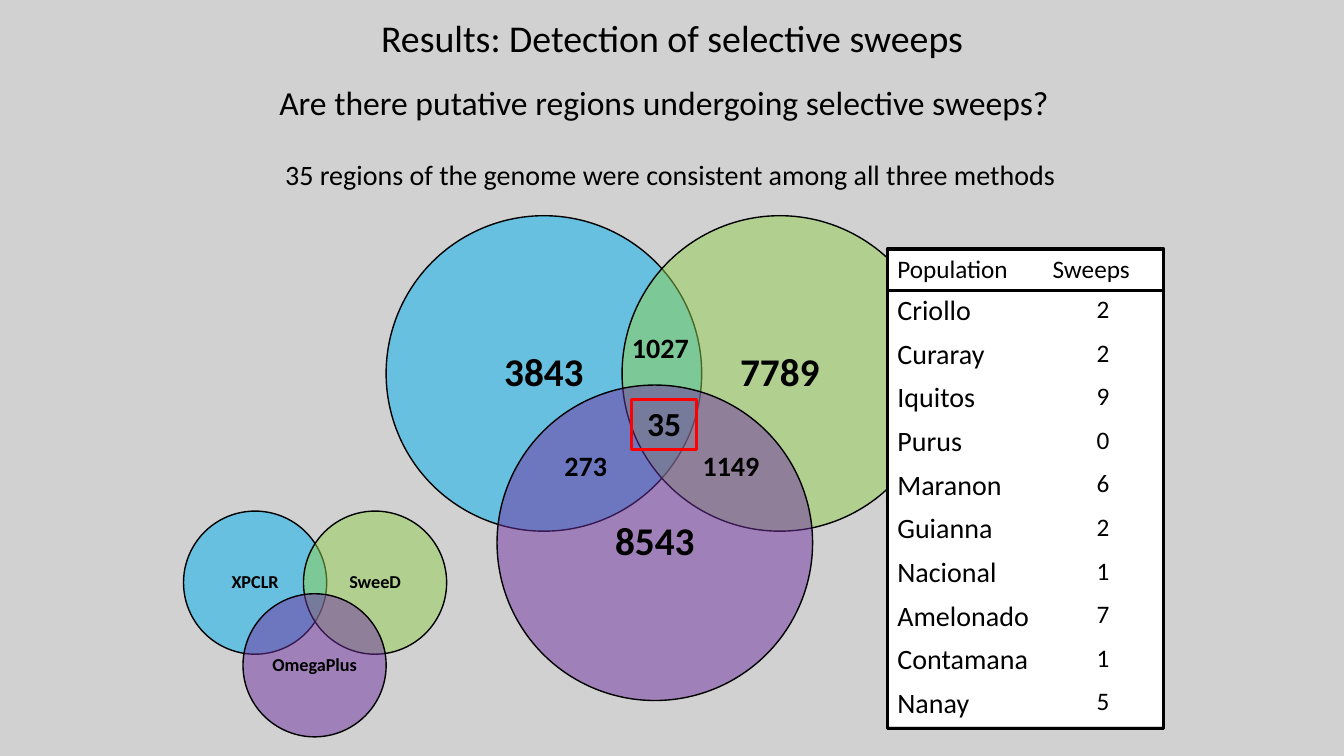
"""Build the selective sweeps slide with its Venn diagram, key and population table."""
from dataclasses import dataclass

import pptx
from lxml import etree
from pptx import slide as slides
from pptx import util as u
from pptx.dml import color
from pptx.enum import shapes, text
from pptx.oxml import ns
from pptx.shapes import autoshape, shapetree
from pptx.text import text as texts


@dataclass(frozen=True)
class Theme:
    font: str = "Calibri"
    background: str = "D1D1D1"
    ink: str = "000000"
    paper: str = "FFFFFF"
    accent: str = "FF0000"
    blue: str = "00B0F0"
    green: str = "92D050"
    purple: str = "7030A0"
    opacity: int = 50
    title: int = 27
    question: int = 24
    body: int = 20
    table: int = 18
    total: int = 28
    shared: int = 24
    key: int = 13
    thin: float = 1
    thick: float = 2.25


@dataclass(frozen=True)
class Box:
    left: float
    top: float
    width: float
    height: float

    def lengths(self) -> tuple[u.Length, ...]:
        return tuple(u.Inches(n) for n in (self.left, self.top, self.width, self.height))


@dataclass(frozen=True)
class Circle:
    label: str
    left: float
    top: float
    fill: str


@dataclass(frozen=True)
class Label:
    words: str
    box: Box
    size: int


THEME = Theme()
TABLE_BOX = Box(8.8, 2.47, 2.74, 4.73)
FRAME_BOX = Box(8.8, 2.47, 2.74, 4.76)
HEADER_HEIGHT = 0.4
HEADER_LINE = 2.88
COLUMN_WIDTHS = (1.54, 1.2)
TITLE = Label("Results: Detection of selective sweeps", Box(3.68, 0.1, 6.15, 0.56), THEME.title)
QUESTION = Label("Are there putative regions undergoing selective sweeps?",
                 Box(2.67, 0.76, 7.99, 0.5), THEME.question)
FINDING = Label("35 regions of the genome were consistent among all three methods",
                Box(2.73, 1.51, 8.17, 0.44), THEME.body)
TOTALS = (
    Circle("3843", 3.83, 2.14, THEME.blue),
    Circle("7789", 6.17, 2.14, THEME.green),
    Circle("8543", 4.93, 3.82, THEME.purple),
)
METHODS = (
    Circle("XPCLR", 1.82, 5.07, THEME.blue),
    Circle("SweeD", 3.01, 5.07, THEME.green),
    Circle("OmegaPlus", 2.41, 5.89, THEME.purple),
)
OVERLAPS = (
    Label("1027", Box(6.17, 3.23, 0.8, 0.44), THEME.body),
    Label("273", Box(5.5, 4.4, 0.67, 0.44), THEME.body),
    Label("1149", Box(6.87, 4.4, 0.88, 0.44), THEME.body),
    Label("35", Box(6.32, 3.95, 0.65, 0.5), THEME.shared),
)
SHARED_BOX = Box(6.26, 3.96, 0.65, 0.5)
SWEEPS = (
    ("Population", "Sweeps"), ("Criollo", "2"), ("Curaray", "2"), ("Iquitos", "9"),
    ("Purus", "0"), ("Maranon", "6"), ("Guianna", "2"), ("Nacional", "1"),
    ("Amelonado", "7"), ("Contamana", "1"), ("Nanay", "5"),
)


def rgb(code: str) -> color.RGBColor:
    return color.RGBColor.from_string(code)


def write(frame: texts.TextFrame, words: str, size: int, bold: bool = False,
          align: text.PP_ALIGN = text.PP_ALIGN.LEFT) -> None:
    frame.text = words
    para = frame.paragraphs[0]
    para.alignment = align
    for span in para.runs:
        span.font.name = THEME.font
        span.font.size = u.Pt(size)
        span.font.bold = bold
        span.font.color.rgb = rgb(THEME.ink)


def fill_placeholder(holder: autoshape.Shape, label: Label) -> None:
    holder.left, holder.top, holder.width, holder.height = label.box.lengths()
    frame = holder.text_frame
    write(frame, label.words, label.size)
    frame.word_wrap = True
    frame.auto_size = text.MSO_AUTO_SIZE.NONE
    frame.vertical_anchor = text.MSO_ANCHOR.TOP
    para = frame.paragraphs[0]
    para.space_before = u.Pt(0)
    properties = para._p.get_or_add_pPr()
    properties.set("marL", "0")
    properties.set("indent", "0")
    etree.SubElement(properties, ns.qn("a:buNone"))


def add_label(tree: shapetree._BaseGroupShapes, label: Label, bold: bool) -> None:
    frame = tree.add_textbox(*label.box.lengths()).text_frame
    frame.word_wrap = True
    write(frame, label.words, label.size, bold)


def add_outline(tree: shapetree._BaseGroupShapes, kind: shapes.MSO_SHAPE, box: Box,
                line: str, width: float) -> autoshape.Shape:
    shape = tree.add_shape(kind, *box.lengths())
    shape.shadow.inherit = False
    shape.fill.background()
    shape.line.color.rgb = rgb(line)
    shape.line.width = u.Pt(width)
    return shape


def add_circles(tree: shapetree._BaseGroupShapes, circles: tuple[Circle, ...],
                diameter: float, size: int, inset: float) -> None:
    for circle in circles:
        box = Box(circle.left, circle.top, diameter, diameter)
        shape = add_outline(tree, shapes.MSO_SHAPE.OVAL, box, THEME.ink, THEME.thin)
        shape.fill.solid()
        shape.fill.fore_color.rgb = rgb(circle.fill)
        tint = shape._element.spPr.find(ns.qn("a:solidFill"))[0]
        etree.SubElement(tint, ns.qn("a:alpha")).set("val", str(THEME.opacity * 1000))
        frame = shape.text_frame
        frame.margin_left = frame.margin_right = u.Inches(inset)
        frame.margin_top = frame.margin_bottom = u.Inches(inset)
        frame.vertical_anchor = text.MSO_ANCHOR.MIDDLE
        write(frame, circle.label, size, True, text.PP_ALIGN.CENTER)
        frame.paragraphs[0].line_spacing = 0.9


def add_sweep_table(page: slides.Slide) -> None:
    table = page.shapes.add_table(len(SWEEPS), len(COLUMN_WIDTHS), *TABLE_BOX.lengths()).table
    for column, width in zip(table.columns, COLUMN_WIDTHS):
        column.width = u.Inches(width)
    row_height = (TABLE_BOX.height - HEADER_HEIGHT) / (len(SWEEPS) - 1)
    for i, record in enumerate(SWEEPS):
        table.rows[i].height = u.Inches(row_height if i else HEADER_HEIGHT)
        for j, words in enumerate(record):
            cell = table.cell(i, j)
            cell.fill.solid()
            cell.fill.fore_color.rgb = rgb(THEME.paper)
            is_name = i > 0 and j == 0
            is_count = i > 0 and j == 1
            if is_name:
                cell.vertical_anchor = text.MSO_ANCHOR.MIDDLE
                cell.margin_top = cell.margin_bottom = u.Inches(0.04)
            write(cell.text_frame, words, THEME.body if is_name else THEME.table,
                  align=text.PP_ALIGN.CENTER if is_count else text.PP_ALIGN.LEFT)


def add_table_frame(page: slides.Slide) -> None:
    add_outline(page.shapes, shapes.MSO_SHAPE.RECTANGLE, FRAME_BOX, THEME.ink, THEME.thick)
    right = FRAME_BOX.left + FRAME_BOX.width
    divider = page.shapes.add_connector(
        shapes.MSO_CONNECTOR.STRAIGHT, u.Inches(right), u.Inches(HEADER_LINE),
        u.Inches(FRAME_BOX.left), u.Inches(HEADER_LINE))
    divider.line.color.rgb = rgb(THEME.ink)
    divider.line.width = u.Pt(THEME.thick)
    etree.SubElement(divider._element.spPr, ns.qn("a:effectLst"))


def main() -> None:
    deck = pptx.Presentation()
    deck.slide_width, deck.slide_height = u.Inches(13.33), u.Inches(7.5)
    page = deck.slides.add_slide(deck.slide_layouts[1])
    page.background.fill.solid()
    page.background.fill.fore_color.rgb = rgb(THEME.background)
    fill_placeholder(page.shapes.title, TITLE)
    fill_placeholder(page.placeholders[1], QUESTION)
    add_label(page.shapes, FINDING, False)
    venn = page.shapes.add_group_shape().shapes
    add_circles(venn, TOTALS, 3.13, THEME.total, 0.12)
    for overlap in OVERLAPS:
        add_label(venn, overlap, True)
    add_outline(venn, shapes.MSO_SHAPE.RECTANGLE, SHARED_BOX, THEME.accent, THEME.thick)
    add_sweep_table(page)
    add_circles(page.shapes.add_group_shape().shapes, METHODS, 1.42, THEME.key, 0.05)
    add_table_frame(page)
    deck.save("out.pptx")


if __name__ == "__main__":
    main()
